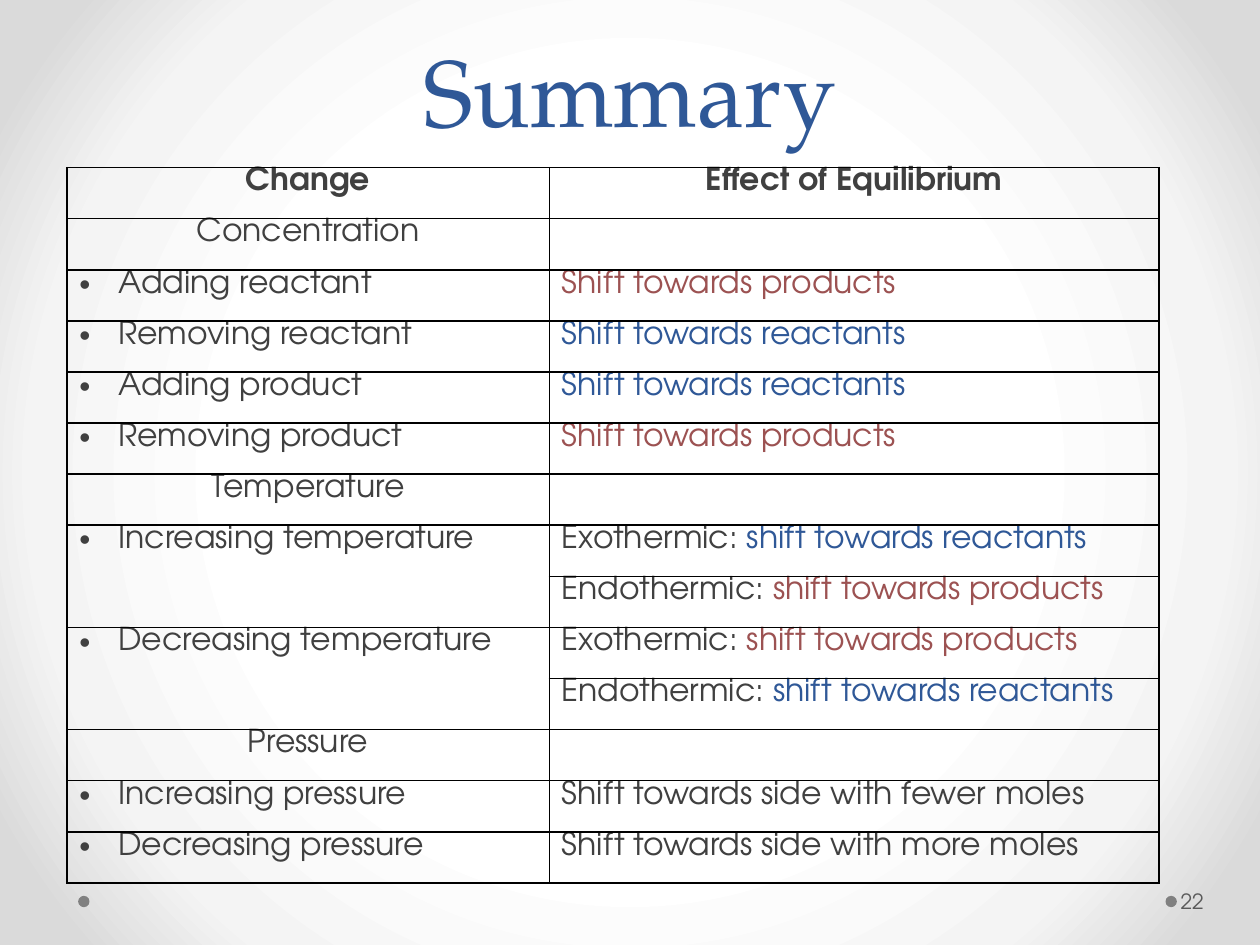
from dataclasses import dataclass

from lxml import etree
from pptx import Presentation
from pptx.dml.color import RGBColor
from pptx.enum.shapes import MSO_SHAPE
from pptx.enum.text import MSO_ANCHOR, PP_ALIGN
from pptx.oxml import parse_xml
from pptx.oxml.ns import nsdecls, qn
from pptx.util import Inches, Pt

OVAL = MSO_SHAPE.OVAL
MIDDLE, BOTTOM = MSO_ANCHOR.MIDDLE, MSO_ANCHOR.BOTTOM
LEFT, CENTER = PP_ALIGN.LEFT, PP_ALIGN.CENTER
BLANK_LAYOUT = 6


@dataclass(frozen=True)
class Theme:
    heading_font: str = "TeX Gyre Pagella"
    body_font: str = "TeX Gyre Adventor"
    title_size: int = 54
    title_spacing: int = 58
    body_size: int = 18
    number_size: int = 12
    text: str = "404040"
    reactants: str = "2F5897"
    products: str = "9C5252"
    number: str = "595959"
    dot: str = "808080"
    border: str = "000000"
    border_width: int = 1
    backdrop: tuple = ((50, "FFFFFF"), (76, "F4F4F4"), (92, "DADADA"))


THEME = Theme()

# Table geometry in inches
TABLE_LEFT, TABLE_TOP = 0.53, 1.33
COLUMN_WIDTHS = (3.83, 4.84)
ROW_HEIGHT = 5.68 / 14
BULLET_INDENT = 0.31

# Kinds of entry in the left column
HEADER, SECTION, ITEM, CONTINUED = range(4)

# Each row: kind, change, plain part of the effect, coloured part, its colour
TO_PRODUCTS = ("hift towards products", THEME.products)
TO_REACTANTS = ("hift towards reactants", THEME.reactants)
ROWS = [
    (HEADER, "Change", "Effect of Equilibrium", None),
    (SECTION, "Concentration", "", None),
    (ITEM, "Adding reactant", "", TO_PRODUCTS),
    (ITEM, "Removing reactant", "", TO_REACTANTS),
    (ITEM, "Adding product", "", TO_REACTANTS),
    (ITEM, "Removing product", "", TO_PRODUCTS),
    (SECTION, "Temperature", "", None),
    (ITEM, "Increasing temperature", "Exothermic: ", TO_REACTANTS),
    (CONTINUED, "", "Endothermic: ", TO_PRODUCTS),
    (ITEM, "Decreasing temperature", "Exothermic: ", TO_PRODUCTS),
    (CONTINUED, "", "Endothermic: ", TO_REACTANTS),
    (SECTION, "Pressure", "", None),
    (ITEM, "Increasing pressure", "Shift towards side with fewer moles", None),
    (ITEM, "Decreasing pressure", "Shift towards side with more moles", None),
]


def add_run(paragraph, text, size, color, font=THEME.body_font, bold=False):
    run = paragraph.add_run()
    run.text = text
    run.font.name = font
    run.font.size = Pt(size)
    run.font.bold = bold
    run.font.color.rgb = RGBColor.from_string(color)


def add_text_box(slide, box, anchor, left_inset=0.1, right_inset=0.1):
    frame = slide.shapes.add_textbox(*map(Inches, box)).text_frame
    frame.word_wrap = True
    frame.vertical_anchor = anchor
    frame.margin_left = Inches(left_inset)
    frame.margin_right = Inches(right_inset)
    return frame.paragraphs[0]


def paint_background(slide):
    slide.background.fill.gradient()
    gradient = slide.background._cSld.bg.bgPr.find(qn("a:gradFill"))
    stops = "".join(
        f'<a:gs pos="{share * 1000}"><a:srgbClr val="{color}"/></a:gs>'
        for share, color in THEME.backdrop
    )
    radial = parse_xml(
        f'<a:gradFill {nsdecls("a")} rotWithShape="1"><a:gsLst>{stops}</a:gsLst>'
        '<a:path path="circle"><a:fillToRect l="50000" t="50000" r="50000" b="50000"/>'
        "</a:path></a:gradFill>"
    )
    gradient.getparent().replace(gradient, radial)


def add_dot(slide, left):
    dot = slide.shapes.add_shape(
        OVAL, Inches(left), Inches(7.11), Inches(0.09), Inches(0.09))
    dot.shadow.inherit = False
    dot.fill.solid()
    dot.fill.fore_color.rgb = RGBColor.from_string(THEME.dot)
    dot.line.fill.background()


def set_bullet(paragraph):
    properties = paragraph._p.get_or_add_pPr()
    properties.set("marL", str(Inches(BULLET_INDENT)))
    properties.set("indent", str(-Inches(BULLET_INDENT)))
    etree.SubElement(properties, qn("a:buFont")).set("typeface", "Arial")
    etree.SubElement(properties, qn("a:buChar")).set("char", "•")


def style_cell(cell):
    cell.margin_top = cell.margin_bottom = 0
    properties = cell._tc.get_or_add_tcPr()
    for side in ("a:lnL", "a:lnR", "a:lnT", "a:lnB"):
        line = etree.SubElement(
            properties, qn(side), w=str(Pt(THEME.border_width)))
        fill = etree.SubElement(line, qn("a:solidFill"))
        etree.SubElement(fill, qn("a:srgbClr"), val=THEME.border)
    cell.fill.background()
    cell.text_frame.paragraphs[0].font.size = Pt(THEME.body_size)


def fill_change(cell, kind, text):
    paragraph = cell.text_frame.paragraphs[0]
    if kind == ITEM:
        set_bullet(paragraph)
    else:
        paragraph.alignment = CENTER
    add_run(paragraph, text, THEME.body_size, THEME.text, bold=kind == HEADER)


def fill_effect(cell, kind, plain, shift):
    paragraph = cell.text_frame.paragraphs[0]
    paragraph.alignment = CENTER if kind == HEADER else LEFT
    if plain:
        add_run(paragraph, plain, THEME.body_size, THEME.text, bold=kind == HEADER)
    if shift:
        ending, color = shift
        initial = "s" if plain else "S"
        add_run(paragraph, initial + ending, THEME.body_size, color)


def add_summary_table(slide):
    table = slide.shapes.add_table(
        len(ROWS), len(COLUMN_WIDTHS), Inches(TABLE_LEFT), Inches(TABLE_TOP),
        Inches(sum(COLUMN_WIDTHS)), Inches(ROW_HEIGHT * len(ROWS))).table
    table.first_row = table.horz_banding = False
    for column, width in zip(table.columns, COLUMN_WIDTHS):
        column.width = Inches(width)
    for index, (kind, change, plain, shift) in enumerate(ROWS):
        table.rows[index].height = Inches(ROW_HEIGHT)
        change_cell, effect_cell = table.cell(index, 0), table.cell(index, 1)
        style_cell(change_cell)
        style_cell(effect_cell)
        if kind == CONTINUED:
            table.cell(index - 1, 0).merge(change_cell)
        else:
            fill_change(change_cell, kind, change)
        fill_effect(effect_cell, kind, plain, shift)


def main():
    presentation = Presentation()
    presentation.slide_width, presentation.slide_height = Inches(10), Inches(7.5)
    slide = presentation.slides.add_slide(presentation.slide_layouts[BLANK_LAYOUT])
    paint_background(slide)

    # Footer dots
    for left in (9.25, 0.62):
        add_dot(slide, left)

    # Title
    title = add_text_box(slide, (0.5, 0, 9, 1.21), BOTTOM)
    title.alignment = CENTER
    title.line_spacing = Pt(THEME.title_spacing)
    add_run(title, "Summary", THEME.title_size, THEME.reactants, THEME.heading_font)

    # Slide number
    number = add_text_box(slide, (9.34, 6.95, 0.61, 0.4), MIDDLE, 0.03, 0.05)
    add_run(number, "22", THEME.number_size, THEME.number)

    add_summary_table(slide)
    presentation.save("out.pptx")


if __name__ == "__main__":
    main()
